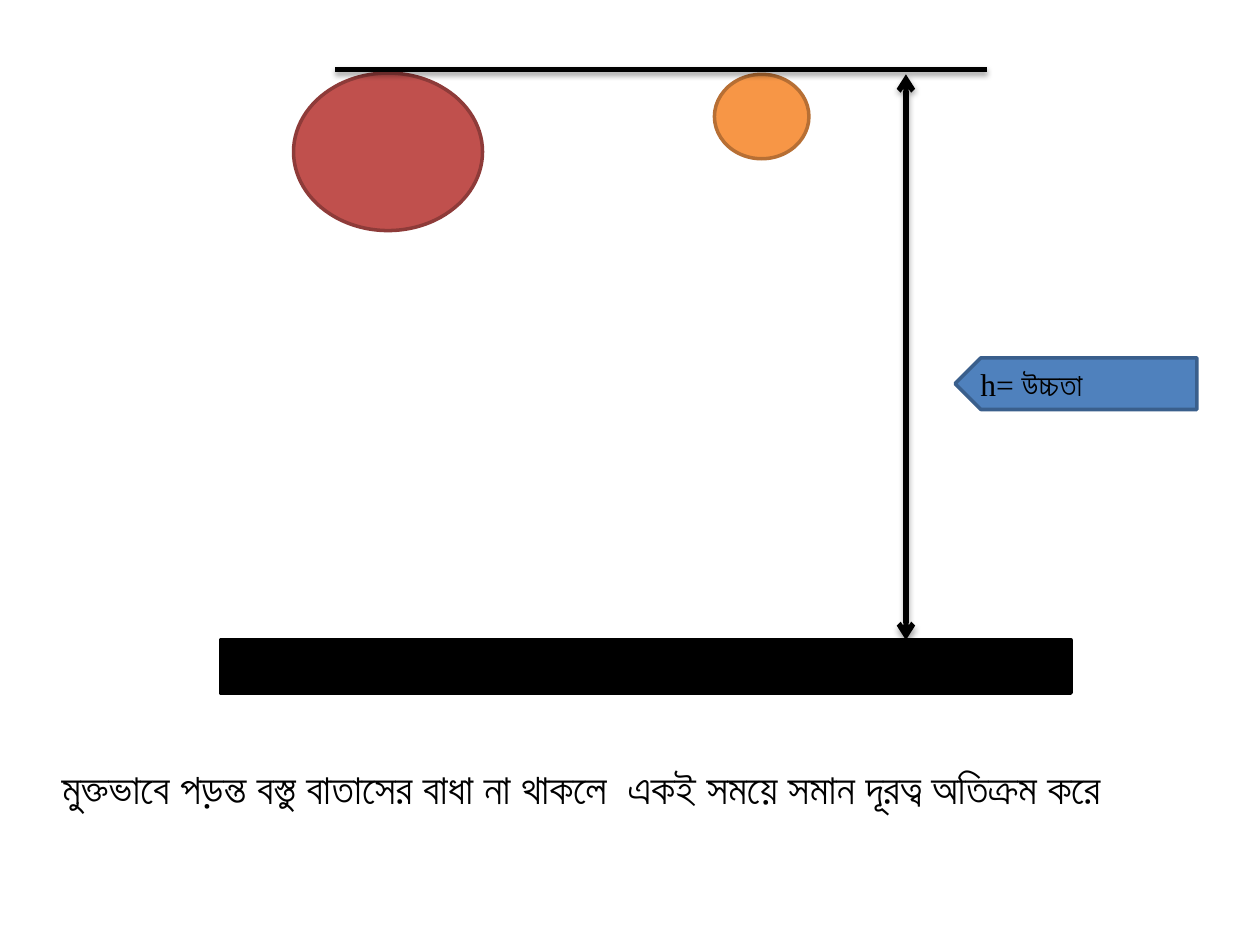
from lxml import etree
from pptx import Presentation, util as u
from pptx.dml.color import RGBColor
from pptx.enum import shapes, text
from pptx.oxml import ns

WIDTH, HEIGHT = 10, 7.5
COLORS = {
    "black": "000000",
    "red": "C0504D", "red_edge": "8E3B39",
    "orange": "F79646", "orange_edge": "B76F34",
    "blue": "4F81BD", "blue_edge": "3A5F8C",
}
KINDS = shapes.MSO_SHAPE
CEILING, DROP_TOP, GROUND = 0.55, 0.59, 5.08
BODIES = [
    (KINDS.OVAL, (2.33, 0.58, 1.5, 1.25), "red", "red_edge"),
    (KINDS.OVAL, (5.67, DROP_TOP, 0.75, 0.67), "orange", "orange_edge"),
    (KINDS.RECTANGLE, (1.75, GROUND, 6.75, 0.42), "black", "black"),
]
HEIGHT_TAG = (KINDS.PENTAGON, (7.58, 2.84, 1.92, 0.41), "blue", "blue_edge")
HEIGHT_TEXT = [("h= ", "Times New Roman", 18), ("উচ্চতা", "Roboto", 18)]
CAPTION_BOX = (0.17, 5.86, 9.33, 0.64)
CAPTION_INDENT = 0.32
CAPTION_TEXT = [
    ("মুক্তভাবে পড়ন্ত বস্তু বাতাসের বাধা না থাকলে  একই সময়ে সমান দূরত্ব অতিক্রম করে", "Roboto", 24),
]
LINES = [
    ((2.66, CEILING), (7.83, CEILING), False),
    ((7.19, DROP_TOP), (7.19, GROUND), True),
]


def rgb(name):
    return RGBColor.from_string(COLORS[name])


def inches(values):
    return [u.Inches(v) for v in values]


def add_body(s, kind, box, fill, edge):
    sp = s.shapes.add_shape(kind, *inches(box))
    sp.shadow.inherit = False
    sp.fill.solid()
    sp.fill.fore_color.rgb = rgb(fill)
    sp.line.color.rgb = rgb(edge)
    sp.line.width = u.Pt(2)
    return sp


def write(tf, parts, anchor):
    tf.word_wrap = True
    tf.vertical_anchor = anchor
    p = tf.paragraphs[0]
    p.alignment = text.PP_ALIGN.LEFT
    for words, font, size in parts:
        r = p.add_run()
        r.text = words
        r.font.name = font
        r.font.size = u.Pt(size)
        r.font.color.rgb = rgb("black")


def add_line(s, start, end, arrows):
    c = s.shapes.add_connector(shapes.MSO_CONNECTOR.STRAIGHT, *inches(start + end))
    c.line.color.rgb = rgb("black")
    c.line.width = u.Pt(3)
    if arrows:
        ln = c.line._get_or_add_ln()
        for tag in ("a:headEnd", "a:tailEnd"):
            etree.SubElement(ln, ns.qn(tag), type="arrow")
    effects = etree.SubElement(c._element.spPr, ns.qn("a:effectLst"))
    shadow = etree.SubElement(
        effects, ns.qn("a:outerShdw"), blurRad=str(u.Pt(3.1)),
        dist=str(u.Pt(1.8)), dir="5400000", rotWithShape="0")
    color = etree.SubElement(shadow, ns.qn("a:srgbClr"), val=COLORS["black"])
    etree.SubElement(color, ns.qn("a:alpha"), val="35000")


def main():
    prs = Presentation()
    prs.slide_width, prs.slide_height = inches((WIDTH, HEIGHT))
    s = prs.slides.add_slide(prs.slide_layouts[6])
    for body in BODIES:
        add_body(s, *body)

    caption = s.shapes.add_textbox(*inches(CAPTION_BOX)).text_frame
    caption.margin_left = u.Inches(CAPTION_INDENT)
    write(caption, CAPTION_TEXT, text.MSO_ANCHOR.BOTTOM)

    for line in LINES:
        add_line(s, *line)

    tag = add_body(s, *HEIGHT_TAG)
    tag._element.spPr.xfrm.set("flipH", "1")
    write(tag.text_frame, HEIGHT_TEXT, text.MSO_ANCHOR.MIDDLE)
    prs.save("out.pptx")


if __name__ == "__main__":
    main()
